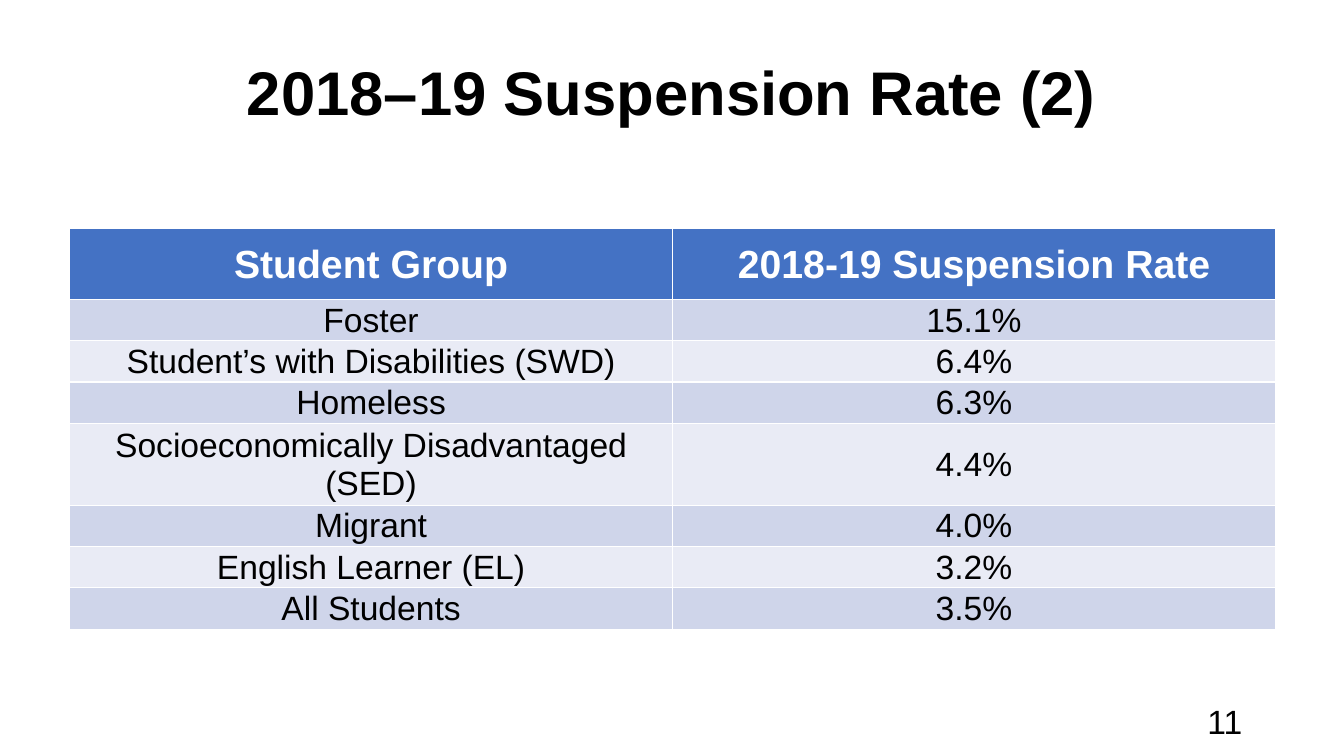
from pptx import Presentation
from pptx.dml.color import RGBColor
from pptx.enum.text import MSO_ANCHOR, PP_ALIGN
from pptx.util import Inches, Pt

COLORS = {
    "black": "000000",
    "white": "FFFFFF",
    "header": "4472C4",
    "odd_row": "CFD5EA",
    "even_row": "E9EBF5",
}
FONT = "Arial"

HEADINGS = ("Student Group", "2018-19 Suspension Rate")
SUSPENSION_RATES = [
    ("Foster", "15.1%"),
    ("Student’s with Disabilities (SWD)", "6.4%"),
    ("Homeless", "6.3%"),
    ("Socioeconomically Disadvantaged (SED)", "4.4%"),
    ("Migrant", "4.0%"),
    ("English Learner (EL)", "3.2%"),
    ("All Students", "3.5%"),
]


def write_text(text_frame, text, size=24, color="black", bold=False,
               align=PP_ALIGN.CENTER):
    paragraph = text_frame.paragraphs[0]
    paragraph.alignment = align
    run = paragraph.add_run()
    run.text = text
    run.font.name = FONT
    run.font.size = Pt(size)
    run.font.bold = bold
    run.font.color.rgb = RGBColor.from_string(COLORS[color])


def add_title(slide, text):
    title = slide.shapes.title
    title.left, title.top = Inches(0), Inches(0)
    title.width, title.height = Inches(13.33), Inches(1.8)
    title.text_frame.vertical_anchor = MSO_ANCHOR.MIDDLE
    write_text(title.text_frame, text, size=44, bold=True)


def fill_cell(cell, text, fill, **text_format):
    cell.fill.solid()
    cell.fill.fore_color.rgb = RGBColor.from_string(COLORS[fill])
    cell.vertical_anchor = MSO_ANCHOR.MIDDLE
    cell.margin_left = cell.margin_top = cell.margin_right = Inches(0.01)
    cell.margin_bottom = Inches(0)
    write_text(cell.text_frame, text, **text_format)


def add_rate_table(slide):
    header_height, row_height = Inches(0.7), Inches(0.41)
    row_count = len(SUSPENSION_RATES) + 1
    # The default table style supplies the white cell borders
    table = slide.shapes.add_table(
        row_count, len(HEADINGS), Inches(0.69), Inches(2.27), Inches(11.96),
        header_height + row_height * len(SUSPENSION_RATES)).table

    # Header row
    table.rows[0].height = header_height
    for column, heading in enumerate(HEADINGS):
        fill_cell(table.cell(0, column), heading, "header",
                  size=28, color="white", bold=True)

    # Banded student group rows
    for row, values in enumerate(SUSPENSION_RATES, start=1):
        table.rows[row].height = row_height
        fill = "odd_row" if row % 2 else "even_row"
        for column, value in enumerate(values):
            fill_cell(table.cell(row, column), value, fill)


def add_slide_number(slide, number):
    box = slide.shapes.add_textbox(Inches(9.42), Inches(6.95), Inches(3), Inches(0.4))
    box.text_frame.word_wrap = True
    box.text_frame.vertical_anchor = MSO_ANCHOR.MIDDLE
    write_text(box.text_frame, number, align=PP_ALIGN.RIGHT)


def main():
    presentation = Presentation()
    presentation.slide_width = Inches(13.33)
    presentation.slide_height = Inches(7.5)
    slide = presentation.slides.add_slide(presentation.slide_layouts[5])
    add_title(slide, "2018–19 Suspension Rate (2)")
    add_slide_number(slide, "11")
    add_rate_table(slide)
    presentation.save("out.pptx")


if __name__ == "__main__":
    main()
